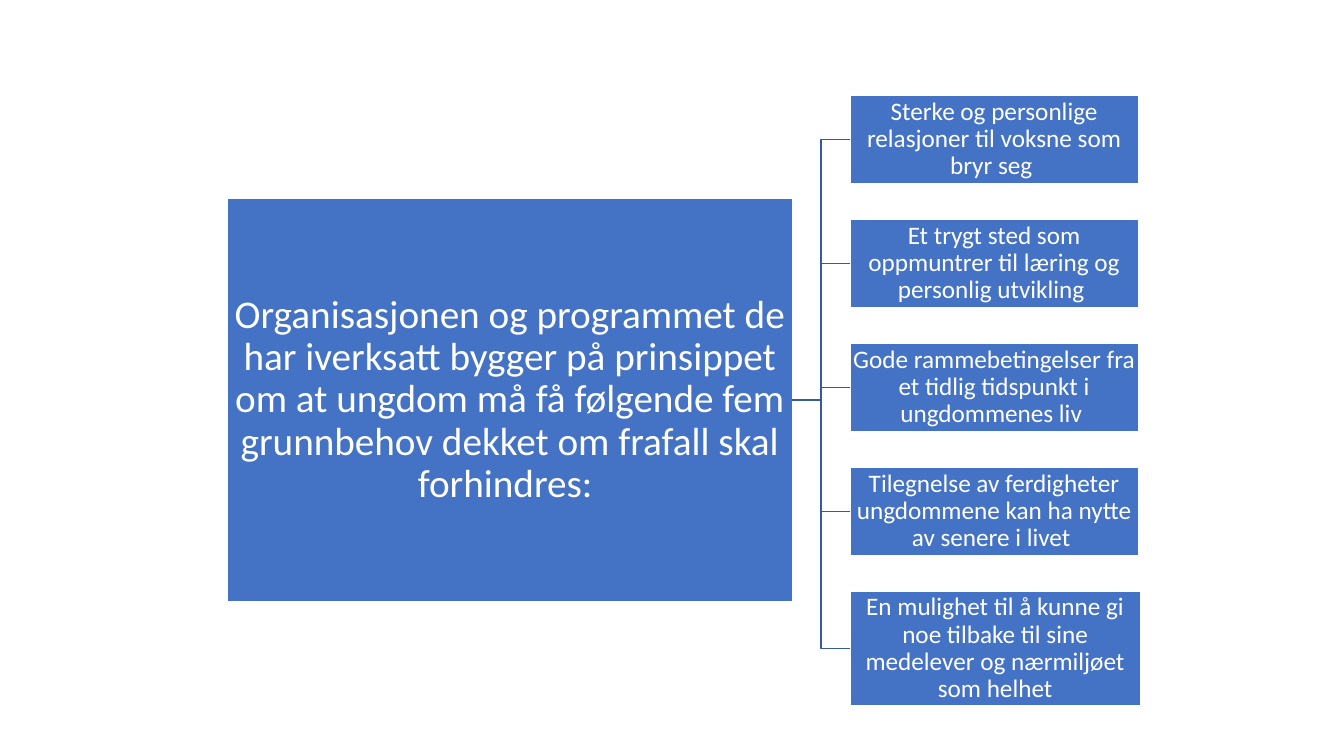
import pptx
import pptx.dml.color
import pptx.enum.shapes
import pptx.enum.text
import pptx.oxml
import pptx.oxml.ns
import pptx.util
from pptx.util import Inches

BLUE = pptx.dml.color.RGBColor(0x44, 0x72, 0xC4)
LINE_BLUE = pptx.dml.color.RGBColor(0x36, 0x5B, 0x9D)
WHITE = pptx.dml.color.RGBColor(0xFF, 0xFF, 0xFF)

PRINCIPLE = (
    "Organisasjonen og programmet de har iverksatt bygger på prinsippet om at "
    "ungdom må få følgende fem grunnbehov dekket om frafall skal forhindres: "
)
NEEDS = [
    ("Sterke og personlige relasjoner til voksne som bryr seg ", 2.86, 0.87),
    ("Et trygt sted som oppmuntrer til læring og personlig utvikling ", 2.86, 0.87),
    ("Gode rammebetingelser fra et tidlig tidspunkt i ungdommenes liv ", 2.86, 0.87),
    ("Tilegnelse av ferdigheter ungdommene kan ha nytte av senere i livet ", 2.86, 0.87),
    ("En mulighet til å kunne gi noe tilbake til sine medelever og nærmiljøet som helhet", 2.88, 1.13),
]
NEED_LEFT, NEED_TOP, NEED_PITCH = 8.43, 0.95, 1.23


def add_box(s, left, top, width, height, text, size, inset):
    """Add a blue rectangle with centred white text."""
    sp = s.shapes.add_shape(
        pptx.enum.shapes.MSO_SHAPE.RECTANGLE,
        Inches(left), Inches(top), Inches(width), Inches(height),
    )
    sp.shadow.inherit = False
    sp.fill.solid()
    sp.fill.fore_color.rgb = BLUE
    sp.line.color.rgb = WHITE
    sp.line.width = pptx.util.Pt(1)
    tf = sp.text_frame
    tf.word_wrap = True
    tf.vertical_anchor = pptx.enum.text.MSO_ANCHOR.MIDDLE
    tf.margin_left = tf.margin_right = Inches(inset)
    tf.margin_top = tf.margin_bottom = Inches(inset)
    tf.text = text
    p = tf.paragraphs[0]
    p.alignment = pptx.enum.text.PP_ALIGN.CENTER
    p.line_spacing = 0.9
    r = p.runs[0]
    r.font.name = "Calibri"
    r.font.size = pptx.util.Pt(size)
    r.font.color.rgb = WHITE
    return sp


def add_branch(s, parent, child):
    """Join the parent's right side to the child's left side with an elbow."""
    c = s.shapes.add_connector(
        pptx.enum.shapes.MSO_CONNECTOR.ELBOW,
        parent.left + parent.width, parent.top + parent.height // 2,
        child.left, child.top + child.height // 2,
    )
    c.begin_connect(parent, 3)
    c.end_connect(child, 1)
    c.line.color.rgb = LINE_BLUE
    c.line.width = pptx.util.Pt(1)
    props = c._element.spPr
    props.append(pptx.oxml.parse_xml(f"<a:effectLst {pptx.oxml.ns.nsdecls('a')}/>"))


def main():
    """Build the slide and save it."""
    prs = pptx.Presentation()
    prs.slide_width, prs.slide_height = Inches(13.33), Inches(7.5)
    s = prs.slides.add_slide(prs.slide_layouts[6])
    principle = add_box(s, 2.25, 1.97, 5.61, 4, PRINCIPLE, 28, 0.02)
    for i, (text, width, height) in enumerate(NEEDS):
        top = NEED_TOP + i * NEED_PITCH
        need = add_box(s, NEED_LEFT, top, width, height, text, 18, 0.01)
        add_branch(s, principle, need)
    prs.save("out.pptx")


if __name__ == "__main__":
    main()
